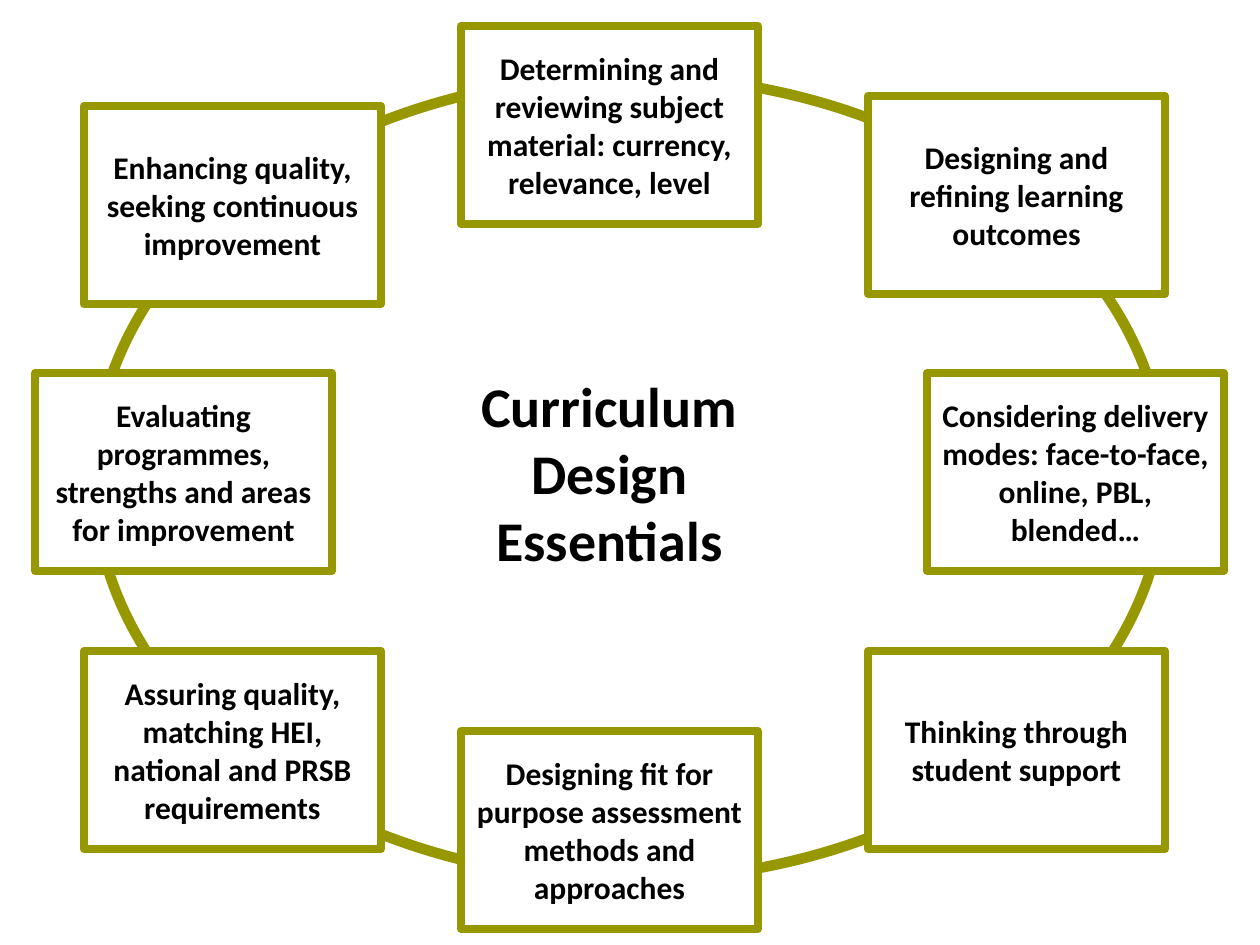
"""Build the Curriculum Design Essentials cycle slide."""
from pptx import Presentation
from pptx import util as u
from pptx.dml.color import RGBColor
from pptx.enum import shapes, text

PX = 914400 / 126
OLIVE, WHITE, BLACK = "979700", "FFFFFF", "000000"
BOX_W, BOX_H = 297, 198
LEFT, CENTRE, RIGHT = 84, 461, 868
MIDDLE, LOWER = 373, 651


def rgb(value):
    return RGBColor.from_string(value)


def add_shape(content, kind=shapes.MSO_SHAPE.RECTANGLE, at=(0, 0, BOX_W, BOX_H),
              line=OLIVE, weight=4.5, size=18):
    sp = s.shapes.add_shape(kind, *(u.Emu(round(n * PX)) for n in at))
    sp.shadow.inherit = False
    sp.fill.solid()
    sp.fill.fore_color.rgb = rgb(WHITE)
    sp.line.color.rgb = rgb(line)
    sp.line.width = u.Pt(weight)
    tf = sp.text_frame
    tf.word_wrap = True
    tf.vertical_anchor = text.MSO_ANCHOR.MIDDLE
    tf.text = content
    for p in tf.paragraphs:
        p.alignment = text.PP_ALIGN.CENTER
        for r in p.runs:
            r.font.name = "Calibri"
            r.font.size = u.Pt(size)
            r.font.bold = True
            r.font.color.rgb = rgb(BLACK)


prs = Presentation()
prs.slide_width = u.Emu(round(1260 * PX))
prs.slide_height = u.Emu(round(945 * PX))
s = prs.slides.add_slide(prs.slide_layouts[6])

add_shape("", kind=shapes.MSO_SHAPE.OVAL, at=(94, 76, 1071, 804), weight=6)

steps = [
    (35, MIDDLE, "Evaluating programmes, strengths and areas for improvement"),
    (927, MIDDLE, "Considering delivery modes: face-to-face, online, PBL, blended…"),
    (CENTRE, 26, "Determining and reviewing subject material: currency, relevance, level"),
    (CENTRE, 731, "Designing fit for purpose assessment methods and approaches"),
    (LEFT, 106, "Enhancing quality, seeking continuous improvement"),
    (RIGHT, 96, "Designing and refining learning outcomes"),
    (LEFT, LOWER, "Assuring quality, matching HEI, national and PRSB requirements"),
    (RIGHT, LOWER, "Thinking through student support"),
]
for x, y, step in steps:
    add_shape(step, at=(x, y, BOX_W, BOX_H))

add_shape("Curriculum\nDesign\nEssentials", at=(CENTRE, MIDDLE, BOX_W, BOX_H),
          line=WHITE, size=32)

prs.save("out.pptx")
